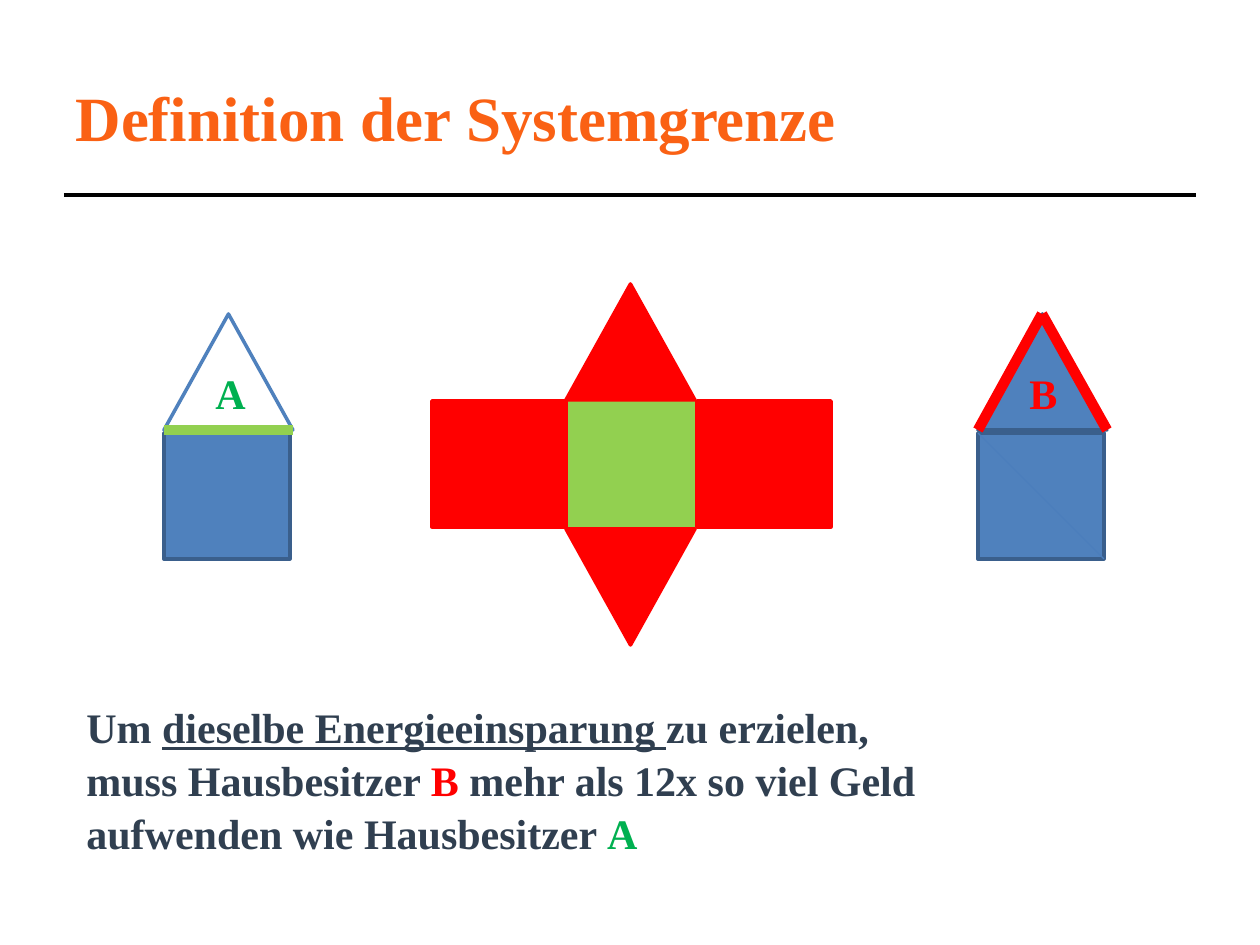
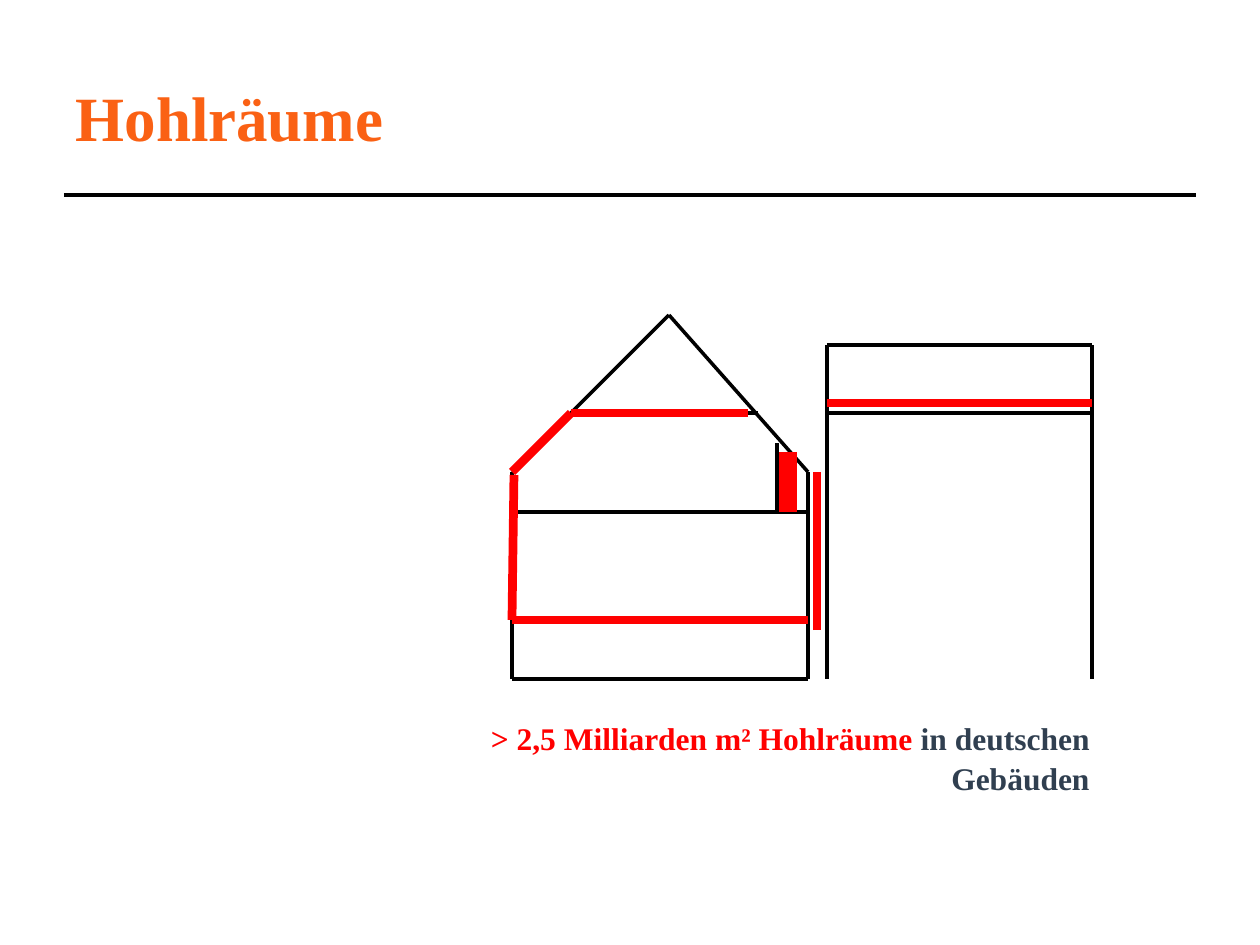
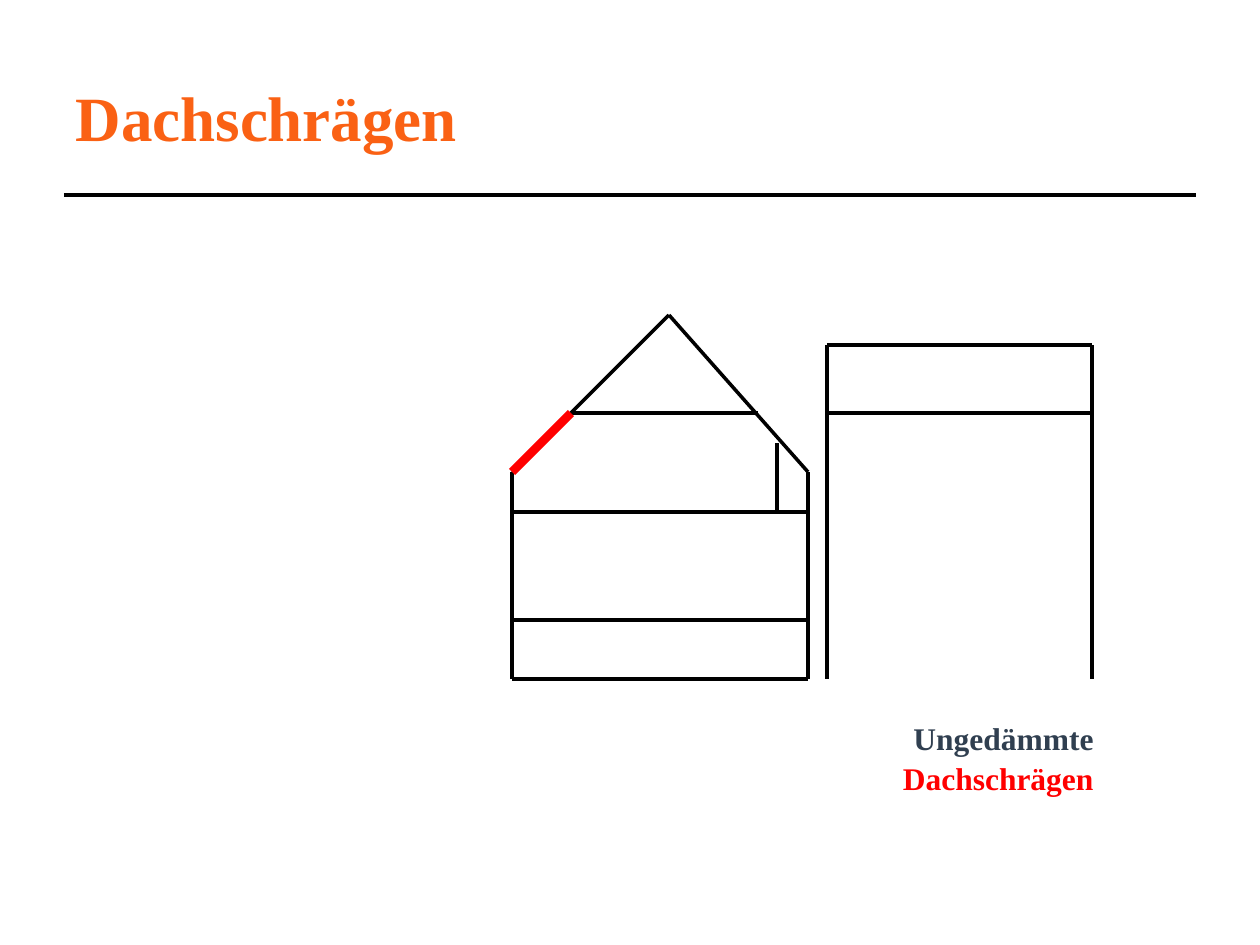
"""Build three slides on system boundaries and cavities in houses."""
from lxml import etree
from pptx import Presentation
from pptx.dml.color import RGBColor
from pptx.enum.shapes import MSO_CONNECTOR, MSO_SHAPE
from pptx.enum.text import MSO_ANCHOR, PP_ALIGN
from pptx.oxml.ns import qn
from pptx.util import Inches, Pt

PX = Inches(1) / 126
FONT = "Times New Roman"
BLACK = RGBColor(0x00, 0x00, 0x00)
ORANGE = RGBColor(0xFA, 0x61, 0x14)
SLATE = RGBColor(0x30, 0x3F, 0x50)
RED = RGBColor(0xFF, 0x00, 0x00)
GREEN = RGBColor(0x00, 0xB0, 0x50)
LIME = RGBColor(0x92, 0xD0, 0x50)
BLUE = RGBColor(0x4F, 0x81, 0xBD)
MID_BLUE = RGBColor(0x4B, 0x7E, 0xBC)
DARK_BLUE = RGBColor(0x3A, 0x5F, 0x8C)

TITLES = ["Definition der Systemgrenze", "Hohlräume", "Dachschrägen"]
RULE = (64, 195, 1196, 195)

RECT, TRIANGLE = MSO_SHAPE.RECTANGLE, MSO_SHAPE.ISOSCELES_TRIANGLE
SIDE, ROOF_W, ROOF_H = 126, 129, 116
ROOF_TOP, ROOF_BASE, BODY_TOP = 314, 430, 433
UNFOLDED = [
    (RECT, (567, 401, SIDE, SIDE), LIME, 0),
    (TRIANGLE, (566, 284, ROOF_W, ROOF_H), RED, 0),
    (TRIANGLE, (566, 529, ROOF_W, ROOF_H), RED, 180),
    (RECT, (432, 401, 134, SIDE), RED, 0),
    (RECT, (697, 401, 134, SIDE), RED, 0),
]
HOUSES = [
    {"left": 164, "label": "A", "color": GREEN, "roof": None, "edge": BLUE,
     "lines": [((0, 430, 129, 430), LIME, 6)]},
    {"left": 978, "label": "B", "color": RED, "roof": BLUE, "edge": DARK_BLUE,
     "lines": [((0, 433, 126, 559), MID_BLUE, 0.75),
               ((0, 430, 64, 314), RED, 6),
               ((64, 314, 129, 430), RED, 6)]},
]
SAVING = [
    [("Um ", SLATE), ("dieselbe Energieeinsparung ", SLATE, True), ("zu erzielen,", SLATE)],
    [("muss Hausbesitzer ", SLATE), ("B ", RED), ("mehr als 12x so viel Geld", SLATE)],
    [("aufwenden wie Hausbesitzer ", SLATE), ("A", GREEN)],
]

BUILDING = [
    (571, 413, 758, 413), (512, 472, 669, 315), (669, 315, 808, 472),
    (512, 512, 808, 512), (512, 620, 808, 620), (808, 679, 808, 472),
    (512, 679, 512, 472), (512, 679, 808, 679), (827, 413, 1092, 413),
    (777, 512, 777, 443), (1092, 679, 1092, 345), (827, 345, 1092, 345),
    (827, 679, 827, 345),
]
ROOF_SLOPE = ((571, 413, 512, 472), 5)
CAVITIES = [
    ((748, 413, 571, 413), 5), ((788, 452, 788, 512), 10), ROOF_SLOPE,
    ((817, 630, 817, 472), 5), ((1092, 403, 827, 403), 5),
    ((514, 475, 512, 620), 5), ((808, 620, 512, 620), 5),
]
SECTIONS = [
    (CAVITIES, (354, 711, 748, 50),
     [[("> 2,5 Milliarden m² Hohlräume ", RED), ("in deutschen Gebäuden", SLATE)]]),
    ([ROOF_SLOPE], (716, 711, 390, 50),
     [[("Ungedämmte ", SLATE), ("Dachschrägen", RED)]]),
]


def emu(values):
    return [round(v * PX) for v in values]


def add_line(shapes, ends, color, width):
    c = shapes.add_connector(MSO_CONNECTOR.STRAIGHT, *emu(ends))
    c.line.color.rgb = color
    c.line.width = Pt(width)
    etree.SubElement(c.element.spPr, qn("a:effectLst"))
    return c


def add_solid(shapes, kind, box, fill, edge):
    sp = shapes.add_shape(kind, *emu(box))
    sp.shadow.inherit = False
    if fill is None:
        sp.fill.background()
    else:
        sp.fill.solid()
        sp.fill.fore_color.rgb = fill
    sp.line.color.rgb = edge
    sp.line.width = Pt(2)
    return sp


def style(font, size, color):
    font.name = FONT
    font.size = Pt(size)
    font.bold = True
    font.color.rgb = color


def add_text(shapes, box, lines, size, align=PP_ALIGN.LEFT, wrap=True):
    tf = shapes.add_textbox(*emu(box)).text_frame
    tf.word_wrap = wrap
    for i, runs in enumerate(lines):
        p = tf.add_paragraph() if i else tf.paragraphs[0]
        p.alignment = align
        p.line_spacing = 1.05
        for text, color, *underline in runs:
            r = p.add_run()
            r.text = text
            style(r.font, size, color)
            if underline:
                r.font.underline = True


def add_titled_slide(prs, layout, title):
    s = prs.slides.add_slide(layout)
    sp = s.shapes.title
    sp.left, sp.top, sp.width, sp.height = emu((63, 38, 864, 157))
    tf = sp.text_frame
    tf.text = title
    tf.vertical_anchor = MSO_ANCHOR.MIDDLE
    p = tf.paragraphs[0]
    p.alignment = PP_ALIGN.LEFT
    style(p.runs[0].font, 36, ORANGE)
    return s


def add_house(shapes, house):
    left = house["left"]
    add_solid(shapes, RECT, (left, BODY_TOP, SIDE, SIDE), BLUE, DARK_BLUE)
    add_solid(shapes, TRIANGLE, (left, ROOF_TOP, ROOF_W, ROOF_H), house["roof"], house["edge"])
    for (x1, y1, x2, y2), color, width in house["lines"]:
        add_line(shapes, (left + x1, y1, left + x2, y2), color, width)
    add_text(shapes, (left + 39, 359, 52, 63), [[(house["label"], house["color"])]], 24, wrap=False)


def main():
    prs = Presentation()
    prs.slide_width, prs.slide_height = Inches(10), Inches(7.5)
    layout = prs.slide_layouts[5]
    boundary, *sections = [add_titled_slide(prs, layout, t) for t in TITLES]
    rule = add_line(boundary.shapes, RULE, BLACK, 2.25)
    layout.shapes.element.append(rule.element)

    unfolded = boundary.shapes.add_group_shape().shapes
    for kind, box, color, rotation in UNFOLDED:
        add_solid(unfolded, kind, box, color, color).rotation = rotation
    for house in HOUSES:
        add_house(boundary.shapes.add_group_shape().shapes, house)
    add_text(boundary.shapes, (74, 693, 1121, 165), SAVING, 24)

    for s, (marks, box, caption) in zip(sections, SECTIONS):
        for ends in BUILDING:
            add_line(s.shapes, ends, BLACK, 2)
        for ends, width in marks:
            add_line(s.shapes, ends, RED, width)
        add_text(s.shapes, box, caption, 18, PP_ALIGN.RIGHT)
    prs.save("out.pptx")


if __name__ == "__main__":
    main()
